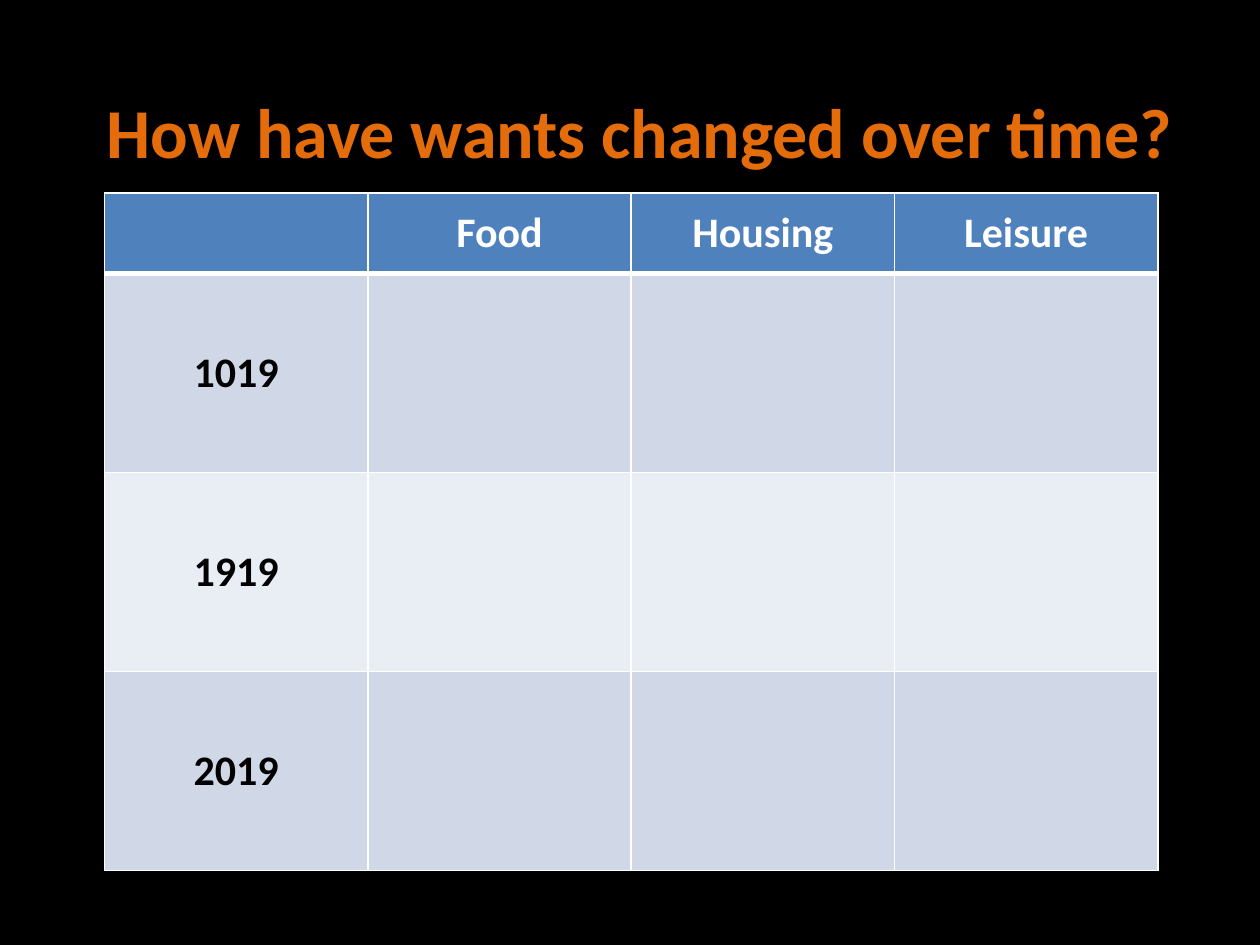
from dataclasses import dataclass

from lxml import etree
from pptx import Presentation
from pptx.dml.color import RGBColor
from pptx.enum.text import MSO_ANCHOR, MSO_AUTO_SIZE, PP_ALIGN
from pptx.oxml.ns import qn
from pptx.util import Inches, Pt

CENTER, LEFT = PP_ALIGN.CENTER, PP_ALIGN.LEFT
MIDDLE = MSO_ANCHOR.MIDDLE
GROW = MSO_AUTO_SIZE.SHAPE_TO_FIT_TEXT

BLACK = RGBColor(0x00, 0x00, 0x00)
WHITE = RGBColor(0xFF, 0xFF, 0xFF)
ORANGE = RGBColor(0xE4, 0x6C, 0x0A)
OUTLINE_BLUE = RGBColor(0x46, 0x7A, 0xB8)
HEADER_BLUE = RGBColor(0x4F, 0x81, 0xBD)
BANDS = (RGBColor(0xD0, 0xD8, 0xE8), RGBColor(0xE9, 0xED, 0xF4))

FONT = "Calibri"
TOPICS = ("", "Food", "Housing", "Leisure")
YEARS = ("1019", "1919", "2019")


@dataclass(frozen=True)
class Grid:
    left: float
    top: float
    column: float
    header: float
    row: float


WANTS = Grid(left=0.83, top=1.53, column=2.09, header=0.64, row=1.58)


def add_line(parent, tag: str, color: RGBColor, width: float) -> None:
    """Append a solid DrawingML line; width is in points."""
    ln = etree.SubElement(parent, qn(tag), w=str(Pt(width)))
    fill = etree.SubElement(ln, qn("a:solidFill"))
    etree.SubElement(fill, qn("a:srgbClr"), val=str(color))


def write(tf, text: str, *, size: float, color: RGBColor, align=LEFT, outline=None) -> None:
    p = tf.paragraphs[0]
    p.alignment = align
    r = p.add_run()
    r.text = text
    if outline:
        add_line(r.font._element, "a:ln", outline, 0.83)
    r.font.name, r.font.size, r.font.bold = FONT, Pt(size), True
    r.font.color.rgb = color


def format_cell(cell, text: str, fill: RGBColor, color: RGBColor, bottom: float) -> None:
    cell.vertical_anchor = MIDDLE
    if text:
        write(cell.text_frame, text, size=24, color=color, align=CENTER)
    tc_pr = cell._tc.get_or_add_tcPr()
    for tag, width in (("a:lnL", 1), ("a:lnR", 1), ("a:lnT", 1), ("a:lnB", bottom)):
        add_line(tc_pr, tag, WHITE, width)
    cell.fill.solid()
    cell.fill.fore_color.rgb = fill


def add_title(s, text: str) -> None:
    tf = s.shapes.add_textbox(Inches(0.75), Inches(0.65), Inches(8.75), Inches(0.77)).text_frame
    tf.word_wrap = False
    tf.auto_size = GROW
    write(tf, text, size=40, color=ORANGE, outline=OUTLINE_BLUE)


def add_wants_table(s, grid: Grid) -> None:
    rows, columns = len(YEARS) + 1, len(TOPICS)
    height = grid.header + len(YEARS) * grid.row
    table = s.shapes.add_table(rows, columns, Inches(grid.left), Inches(grid.top),
                               Inches(columns * grid.column), Inches(height)).table
    for column in table.columns:
        column.width = Inches(grid.column)
    for i, row in enumerate(table.rows):
        row.height = Inches(grid.row if i else grid.header)
    for j, topic in enumerate(TOPICS):
        format_cell(table.cell(0, j), topic, HEADER_BLUE, WHITE, bottom=3)
        for i, year in enumerate(YEARS):
            text = year if j == 0 else ""
            format_cell(table.cell(i + 1, j), text, BANDS[i % 2], BLACK, bottom=1)
        # Both cells that share the header edge carry the same width.
        table.cell(1, j)._tc.tcPr.find(qn("a:lnT")).set("w", str(Pt(3)))


def main() -> None:
    prs = Presentation()
    prs.slide_width, prs.slide_height = Inches(10), Inches(7.5)
    s = prs.slides.add_slide(prs.slide_layouts[6])
    s.background.fill.solid()
    s.background.fill.fore_color.rgb = BLACK
    add_title(s, "How have wants changed over time?")
    add_wants_table(s, WANTS)
    prs.save("out.pptx")


if __name__ == "__main__":
    main()
